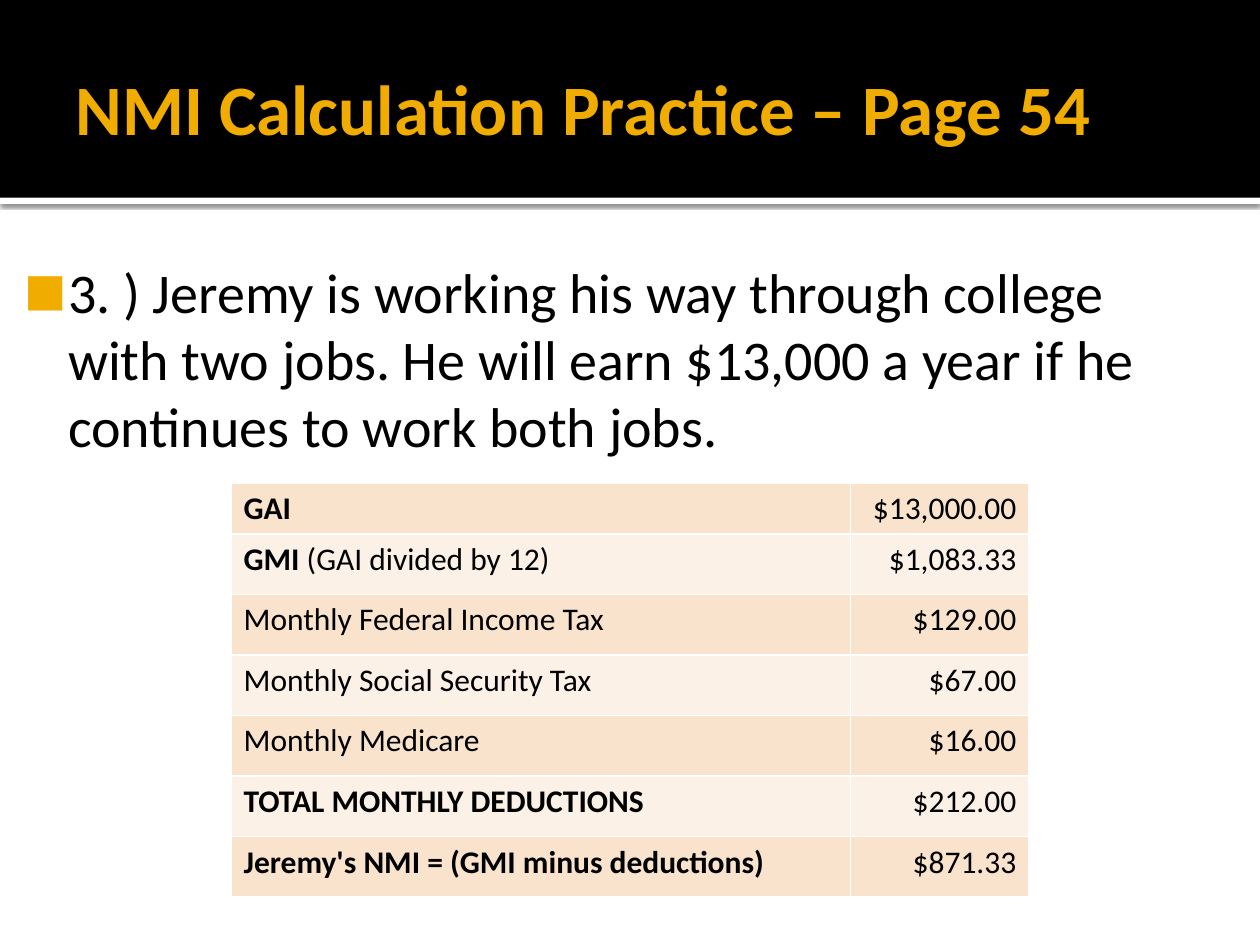
from pptx import Presentation
from pptx.dml.color import RGBColor
from pptx.enum.shapes import MSO_SHAPE
from pptx.enum.text import MSO_ANCHOR, MSO_AUTO_SIZE, PP_ALIGN
from pptx.oxml import parse_xml
from pptx.oxml.ns import nsdecls
from pptx.util import Pt

# Content
TITLE = "NMI Calculation Practice – Page 54"
BODY = ("3. ) Jeremy is working his way through college with two jobs. "
        "He will earn $13,000 a year if he continues to work both jobs.")
# Bold label, plain label, amount
ROWS = [
    ("GAI", "", "$13,000.00"),
    ("GMI", " (GAI divided by 12)", "$1,083.33"),
    ("", "Monthly Federal Income Tax", "$129.00"),
    ("", "Monthly Social Security Tax", "$67.00"),
    ("", "Monthly Medicare", "$16.00"),
    ("TOTAL MONTHLY DEDUCTIONS", "", "$212.00"),
    ("Jeremy's NMI = (GMI minus deductions)", "", "$871.33"),
]
COLORS = {"black": "000000", "white": "FFFFFF", "gold": "F0AD00",
          "odd": "F9E3CC", "even": "FCF1E7"}
FONT = "Calibri"
WIDTH, HEIGHT, BAND_H = 720, 540, 113
COL_WIDTHS = (354, 102)
FIRST_ROW_H, ROW_H = 28, 34.6


def rgb(name):
    return RGBColor.from_string(COLORS[name])


def style(r, size, color="black", bold=False):
    r.font.name, r.font.size, r.font.bold = FONT, Pt(size), bold
    r.font.color.rgb = rgb(color)


def place(sp, left, top, width, height):
    sp.left, sp.top, sp.width, sp.height = map(Pt, (left, top, width, height))


def set_margins(tf, *margins):
    (tf.margin_left, tf.margin_top,
     tf.margin_right, tf.margin_bottom) = map(Pt, margins)
    tf.auto_size = MSO_AUTO_SIZE.NONE
    tf.word_wrap = True


def add_band(s, top, height, color):
    sp = s.shapes.add_shape(MSO_SHAPE.RECTANGLE, 0, Pt(top), Pt(WIDTH), Pt(height))
    sp.shadow.inherit = False
    sp.fill.solid()
    sp.fill.fore_color.rgb = rgb(color)
    sp.line.fill.background()
    s.shapes.title.element.addprevious(sp.element)  # behind the title
    return sp


def add_borders(cell):
    tcPr = cell._tc.get_or_add_tcPr()
    for i, side in enumerate(("lnL", "lnR", "lnT", "lnB")):
        tcPr.insert(i, parse_xml(
            f'<a:{side} {nsdecls("a")} w="{Pt(1)}"><a:solidFill>'
            f'<a:srgbClr val="{COLORS["white"]}"/></a:solidFill></a:{side}>'))


prs = Presentation()
prs.slide_width, prs.slide_height = Pt(WIDTH), Pt(HEIGHT)
s = prs.slides.add_slide(prs.slide_layouts[1])

# Header band and the white strip with its shadow
strip = add_band(s, BAND_H, 3.6, "white")
strip.element.spPr.find("{*}effectLst").append(parse_xml(
    f'<a:outerShdw {nsdecls("a")} blurRad="{Pt(2.5)}" dist="{Pt(0.8)}" dir="5400000">'
    f'<a:srgbClr val="{COLORS["black"]}"><a:alpha val="60000"/></a:srgbClr></a:outerShdw>'))
add_band(s, 0, BAND_H, "black")

# Title
title = s.shapes.title
place(title, 36, 12.2, 648, 98.6)
tf = title.text_frame
tf.text = TITLE
set_margins(tf, 7.2, 3.6, 3.6, 3.6)
tf.vertical_anchor = MSO_ANCHOR.MIDDLE
p = tf.paragraphs[0]
p.alignment = PP_ALIGN.LEFT
style(p.runs[0], 40.5, "gold", True)

# Problem text with a square bullet
body = s.placeholders[1]
place(body, 0, 139.7, 696, 364.3)
tf = body.text_frame
tf.text = BODY
set_margins(tf, 4.3, 7.2, 7.2, 3.6)
p = tf.paragraphs[0]
p.space_before = Pt(2)
style(p.runs[0], 32)
pPr = p._p.get_or_add_pPr()
pPr.set("marL", str(Pt(34.6)))
pPr.set("indent", str(Pt(-25.2)))
for xml in (f'<a:buClr {{}}><a:srgbClr val="{COLORS["gold"]}"/></a:buClr>',
            '<a:buSzPct {} val="80000"/>',
            f'<a:buFont {{}} typeface="{FONT}"/>',
            '<a:buChar {} char="■"/>'):
    pPr.append(parse_xml(xml.format(nsdecls("a"))))

# Income and deductions table
table = s.shapes.add_table(
    len(ROWS), len(COL_WIDTHS), Pt(132), Pt(276), Pt(sum(COL_WIDTHS)),
    Pt(FIRST_ROW_H + ROW_H * (len(ROWS) - 1))).table
table.first_row = False
for col, width in zip(table.columns, COL_WIDTHS):
    col.width = Pt(width)
for i, (strong, plain, amount) in enumerate(ROWS):
    table.rows[i].height = Pt(ROW_H if i else FIRST_ROW_H)
    cells = (([(strong, True), (plain, False)], PP_ALIGN.LEFT),
             ([(amount, False)], PP_ALIGN.RIGHT))
    for j, (runs, align) in enumerate(cells):
        cell = table.cell(i, j)
        cell.fill.solid()
        cell.fill.fore_color.rgb = rgb("even" if i % 2 else "odd")
        add_borders(cell)
        p = cell.text_frame.paragraphs[0]
        p.alignment = align
        for text, bold in runs:
            if text:
                r = p.add_run()
                r.text = text
                style(r, 18, bold=bold)

prs.save("out.pptx")
